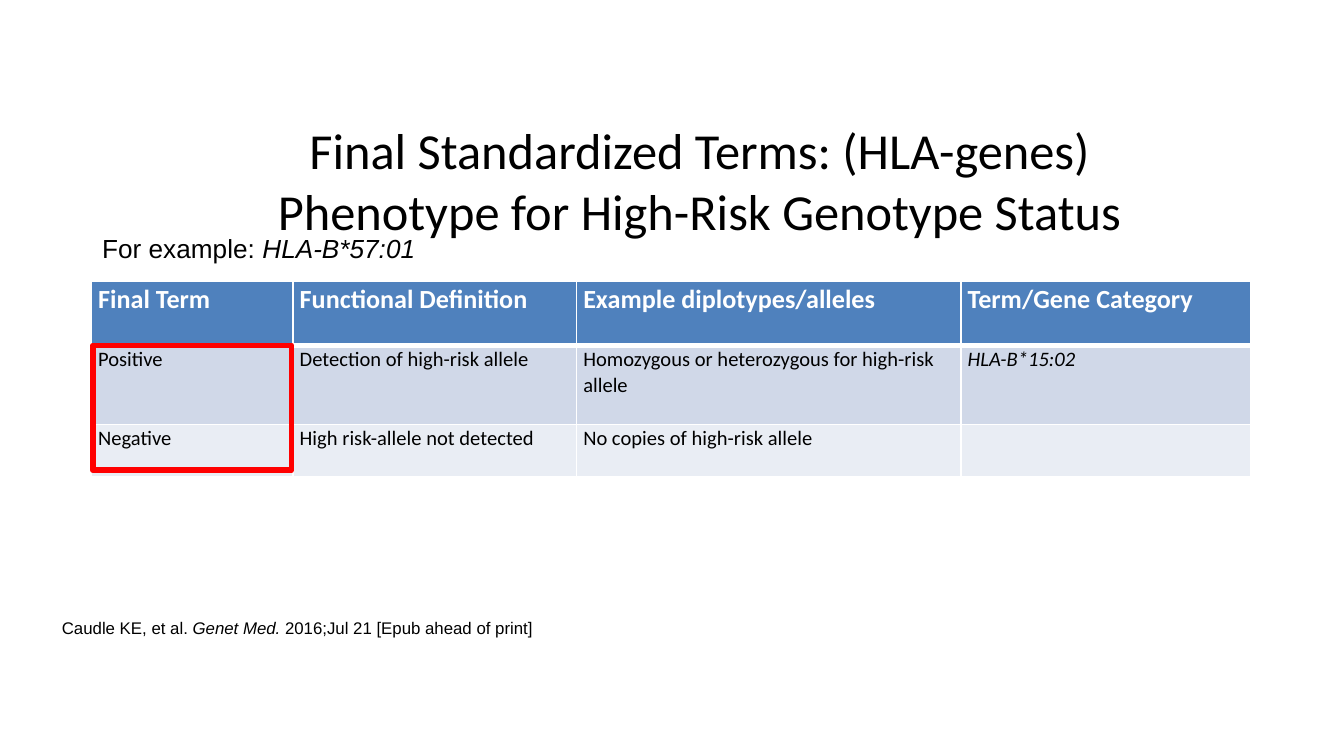
from dataclasses import dataclass

from lxml.etree import SubElement
from pptx import Presentation
from pptx.dml.color import RGBColor
from pptx.enum.shapes import MSO_SHAPE as Shape
from pptx.enum.text import MSO_ANCHOR as Anchor, MSO_AUTO_SIZE as AutoSize, PP_ALIGN as Align
from pptx.oxml.ns import qn
from pptx.util import Inches, Pt

BLACK, WHITE, RED = "000000", "FFFFFF", "FF0000"


@dataclass
class Run:
    text: str
    italic: bool = False


@dataclass
class Style:
    font: str
    size: float
    color: str = BLACK
    bold: bool = False


@dataclass
class Row:
    height: float
    fill: str
    style: Style
    cells: list[Run]
    top_inset: float = 0
    rule_above: float = 1
    rule_below: float = 1


HEADER = Style("Calibri", 14, WHITE, True)
BODY = Style("Calibri", 11)
COLUMNS = [1.5, 2.11, 2.86, 2.16]
ROWS = [
    Row(0.48, "4F81BD", HEADER, [
        Run("Final Term"), Run("Functional Definition"),
        Run("Example diplotypes/alleles"), Run("Term/Gene Category"),
    ], top_inset=0.01, rule_below=3),
    Row(0.59, "D0D8E8", BODY, [
        Run("Positive"), Run("Detection of high-risk allele"),
        Run("Homozygous or heterozygous for high-risk allele"),
        Run("HLA-B*15:02", True),
    ], rule_above=3),
    Row(0.39, "E9EDF4", BODY, [
        Run("Negative"), Run("High risk-allele not detected"),
        Run("No copies of high-risk allele"), Run(""),
    ]),
]


def rgb(color: str) -> RGBColor:
    return RGBColor.from_string(color)


def add_run(p, run: Run, style: Style) -> None:
    r = p.add_run()
    r.text = run.text
    r.font.name = style.font
    r.font.size = Pt(style.size)
    r.font.bold = style.bold
    r.font.italic = run.italic
    r.font.color.rgb = rgb(style.color)


def set_insets(target, left: float, top: float, right: float, bottom: float) -> None:
    target.margin_left, target.margin_top = Inches(left), Inches(top)
    target.margin_right, target.margin_bottom = Inches(right), Inches(bottom)


def set_title(s, lines: list[str], style: Style) -> None:
    title = s.shapes.title
    title.left, title.top = Inches(0.68), Inches(0.93)
    title.width, title.height = Inches(9.05), Inches(0.82)
    tf = title.text_frame
    tf.word_wrap = True
    tf.auto_size = AutoSize.NONE
    tf.vertical_anchor = Anchor.MIDDLE
    set_insets(tf, 0.07, 0.04, 0.07, 0.04)
    p = tf.paragraphs[0]
    p.alignment = Align.CENTER
    for i, line in enumerate(lines):
        if i:
            p.add_line_break()
        add_run(p, Run(line), style)


def add_text(s, left: float, top: float, width: float, height: float,
             runs: list[Run], style: Style, wrap: bool) -> None:
    box = s.shapes.add_textbox(Inches(left), Inches(top), Inches(width), Inches(height))
    tf = box.text_frame
    tf.word_wrap = wrap
    tf.auto_size = AutoSize.SHAPE_TO_FIT_TEXT
    set_insets(tf, 0.07, 0.04, 0.07, 0.04)
    for run in runs:
        add_run(tf.paragraphs[0], run, style)


def set_borders(cell, above: float, below: float) -> None:
    tc_pr = cell._tc.get_or_add_tcPr()
    for side, width in (("L", 1), ("R", 1), ("T", above), ("B", below)):
        ln = SubElement(tc_pr, qn(f"a:ln{side}"), w=str(Pt(width)))
        SubElement(SubElement(ln, qn("a:solidFill")), qn("a:srgbClr"), val=WHITE)


def add_term_table(s, left: float, top: float) -> None:
    table = s.shapes.add_table(
        len(ROWS), len(COLUMNS), Inches(left), Inches(top),
        Inches(sum(COLUMNS)), Inches(sum(row.height for row in ROWS))).table
    for column, width in zip(table.columns, COLUMNS):
        column.width = Inches(width)
    for i, row in enumerate(ROWS):
        table.rows[i].height = Inches(row.height)
        for j, run in enumerate(row.cells):
            cell = table.cell(i, j)
            set_insets(cell, 0.05, row.top_inset, 0.05, 0)
            set_borders(cell, row.rule_above, row.rule_below)
            cell.fill.solid()
            cell.fill.fore_color.rgb = rgb(row.fill)
            p = cell.text_frame.paragraphs[0]
            p.font.size = Pt(row.style.size)
            if run.text:
                p.line_spacing = 1.05
                p.space_before = Pt(6)
                add_run(p, run, row.style)


def add_highlight(s, left: float, top: float, width: float, height: float) -> None:
    sp = s.shapes.add_shape(
        Shape.RECTANGLE, Inches(left), Inches(top), Inches(width), Inches(height))
    sp.shadow.inherit = False
    sp.fill.background()
    sp.line.color.rgb = rgb(RED)
    sp.line.width = Pt(3)
    SubElement(sp.line._get_or_add_ln(), qn("a:round"))


def main() -> None:
    prs = Presentation()
    prs.slide_width = Inches(10)
    prs.slide_height = prs.slide_width * 9 // 16
    s = prs.slides.add_slide(prs.slide_layouts[5])
    set_title(s, ["Final Standardized Terms: (HLA-genes)",
                  "Phenotype for High-Risk Genotype Status"], Style("Calibri", 27))
    add_term_table(s, 0.68, 2.09)
    add_text(s, 0.69, 1.69, 2.55, 0.32,
             [Run("For example: "), Run("HLA-B*57:01", True)],
             Style("Arial", 14), wrap=False)
    add_highlight(s, 0.69, 2.57, 1.48, 0.93)
    add_text(s, 0.39, 4.56, 7.01, 0.23,
             [Run("Caudle KE, et al. "), Run("Genet Med.", True),
              Run(" 2016;Jul 21 [Epub ahead of print]")],
             Style("Arial", 9), wrap=True)
    prs.save("out.pptx")


if __name__ == "__main__":
    main()
